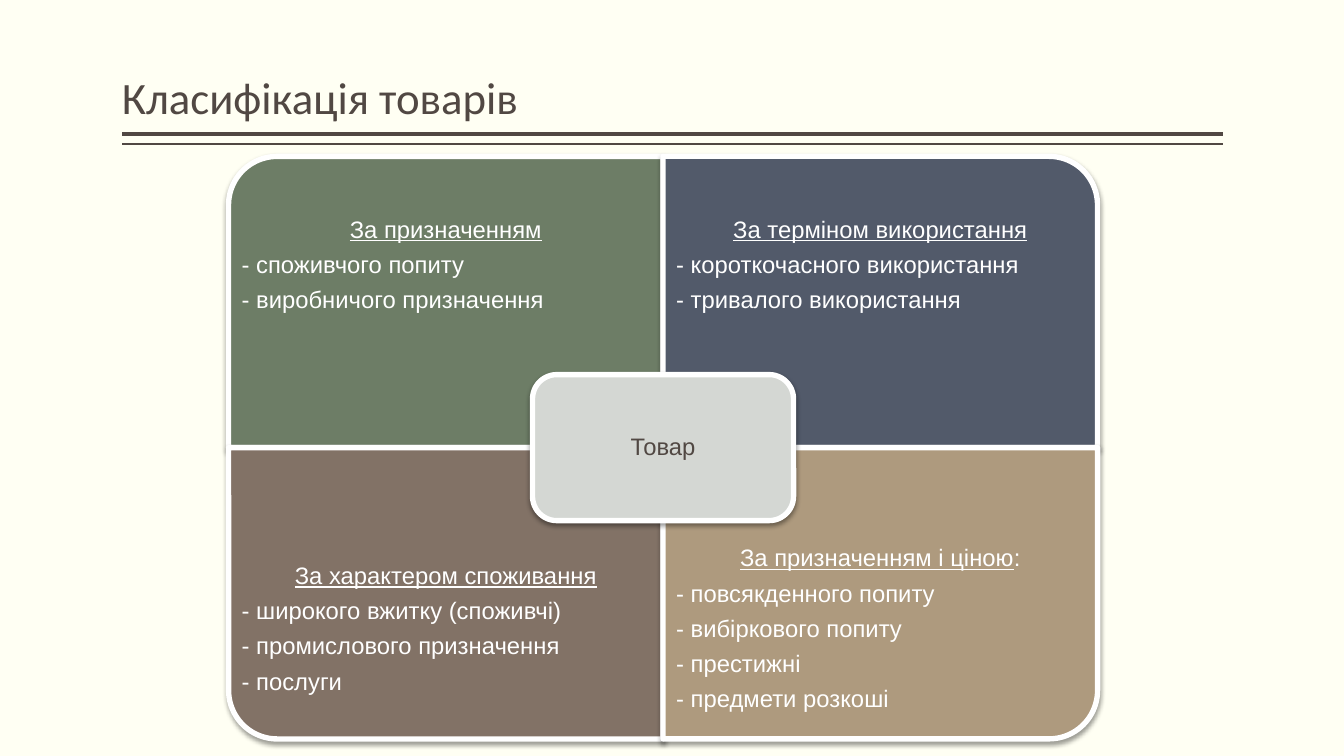
from dataclasses import dataclass

from lxml.etree import SubElement
from pptx import Presentation
from pptx.dml.color import RGBColor
from pptx.enum.shapes import MSO_CONNECTOR, MSO_SHAPE
from pptx.enum.text import MSO_ANCHOR, PP_ALIGN
from pptx.oxml.ns import qn
from pptx.util import Cm, Pt

HUES = {
    "page": "FFFFF3",
    "dark": "514843",
    "white": "FFFFFF",
    "green": "6D7D66",
    "blue": "525A6A",
    "brown": "827266",
    "sand": "AE9A7E",
    "grey": "D4D7D3",
    "shade": "000000",
}
MID_X, MID_Y = 16.71, 11.28
WIDE, HIGH = 10.95, 7.34
TEXT_H = 5.51


@dataclass
class Panel:
    col: int
    row: int
    turn: int
    hue: str
    head: str
    items: list[str]
    tail: str = ""


PANELS = [
    Panel(0, 0, 270, "green", "За призначенням",
          ["споживчого попиту", "виробничого призначення"]),
    Panel(1, 0, 0, "blue", "За терміном використання",
          ["короткочасного використання", "тривалого використання"]),
    Panel(0, 1, 180, "brown", "За характером споживання",
          ["широкого вжитку (споживчі)", "промислового призначення", "послуги"]),
    Panel(1, 1, 90, "sand", "За призначенням і ціною",
          ["повсякденного попиту", "вибіркового попиту", "престижні",
           "предмети розкоші"], ":"),
]


def paint(hue: str) -> RGBColor:
    return RGBColor.from_string(HUES[hue])


def add_run(para, text: str, size: float, hue: str = "white",
            face: str = "Arial", under: bool = False) -> None:
    run = para.add_run()
    run.text = text
    run.font.size = Pt(size)
    run.font.name = face
    run.font.color.rgb = paint(hue)
    run.font.underline = under


def set_frame(frame, pad_x: float, pad_y: float, anchor) -> None:
    frame.word_wrap = True
    frame.vertical_anchor = anchor
    frame.margin_left = frame.margin_right = Cm(pad_x)
    frame.margin_top = frame.margin_bottom = Cm(pad_y)


def space(para, align, after: float = 6.8) -> None:
    para.alignment = align
    para.line_spacing = 0.9
    para.space_after = Pt(after)


def add_block(slide, kind, left: float, top: float, width: float,
              height: float, hue: str):
    block = slide.shapes.add_shape(kind, Cm(left), Cm(top), Cm(width), Cm(height))
    block.fill.solid()
    block.fill.fore_color.rgb = paint(hue)
    block.line.color.rgb = paint("white")
    block.line.width = Pt(3.82)
    block.shadow.inherit = False
    glow = block._element.spPr.find(qn("a:effectLst"))
    shade = SubElement(glow, qn("a:outerShdw"), blurRad=str(Pt(3.5)),
                       dist=str(Pt(2)), dir="5400000", rotWithShape="0")
    tint = SubElement(shade, qn("a:srgbClr"), val=HUES["shade"])
    SubElement(tint, qn("a:alpha"), val="38000")
    return block


def add_panel(slide, panel: Panel) -> None:
    left = MID_X + (panel.col - 1) * WIDE
    top = MID_Y + (panel.row - 1) * HIGH
    wide, high = (HIGH, WIDE) if panel.turn % 180 else (WIDE, HIGH)
    block = add_block(slide, MSO_SHAPE.ROUND_1_RECTANGLE,
                      left + (WIDE - wide) / 2, top + (HIGH - high) / 2,
                      wide, high, panel.hue)
    block.rotation = panel.turn

    text_y = top + panel.row * (HIGH - TEXT_H)
    frame = slide.shapes.add_textbox(
        Cm(left), Cm(text_y), Cm(WIDE), Cm(TEXT_H)).text_frame
    set_frame(frame, 0.33, 0.33, MSO_ANCHOR.MIDDLE)
    para = frame.paragraphs[0]
    space(para, PP_ALIGN.CENTER)
    add_run(para, panel.head, 17, under=True)
    if panel.tail:
        add_run(para, panel.tail, 17)
    for item in panel.items:
        para = frame.add_paragraph()
        space(para, PP_ALIGN.LEFT)
        add_run(para, f"- {item}", 17)


def add_rule(slide, top: float, weight: float) -> None:
    rule = slide.shapes.add_connector(
        MSO_CONNECTOR.STRAIGHT, Cm(30.81), Cm(top), Cm(3.07), Cm(top))
    rule.line.color.rgb = paint("dark")
    rule.line.width = Pt(weight)
    SubElement(rule._element.spPr, qn("a:effectLst"))


def add_title(slide, text: str) -> None:
    frame = slide.shapes.add_textbox(
        Cm(3.07), Cm(0.2), Cm(27.74), Cm(3.05)).text_frame
    set_frame(frame, 0, 0.13, MSO_ANCHOR.BOTTOM)
    para = frame.paragraphs[0]
    space(para, PP_ALIGN.LEFT, 0)
    add_run(para, text, 32, "dark", "Calibri")


def add_core(slide, text: str) -> None:
    wide, high = 6.58, 3.68
    core = add_block(slide, MSO_SHAPE.ROUNDED_RECTANGLE, MID_X - wide / 2,
                     MID_Y - high / 2, wide, high, "grey")
    set_frame(core.text_frame, 0.18, 0.18, MSO_ANCHOR.MIDDLE)
    para = core.text_frame.paragraphs[0]
    space(para, PP_ALIGN.CENTER)
    add_run(para, text, 17, "dark")


def main() -> None:
    deck = Presentation()
    deck.slide_width, deck.slide_height = Cm(33.87), Cm(19.05)
    slide = deck.slides.add_slide(deck.slide_layouts[6])
    slide.background.fill.solid()
    slide.background.fill.fore_color.rgb = paint("page")
    for top, weight in ((3.38, 3), (3.63, 1)):
        add_rule(slide, top, weight)
    add_title(slide, "Класифікація товарів")
    for panel in PANELS:
        add_panel(slide, panel)
    add_core(slide, "Товар")
    deck.save("out.pptx")


if __name__ == "__main__":
    main()
